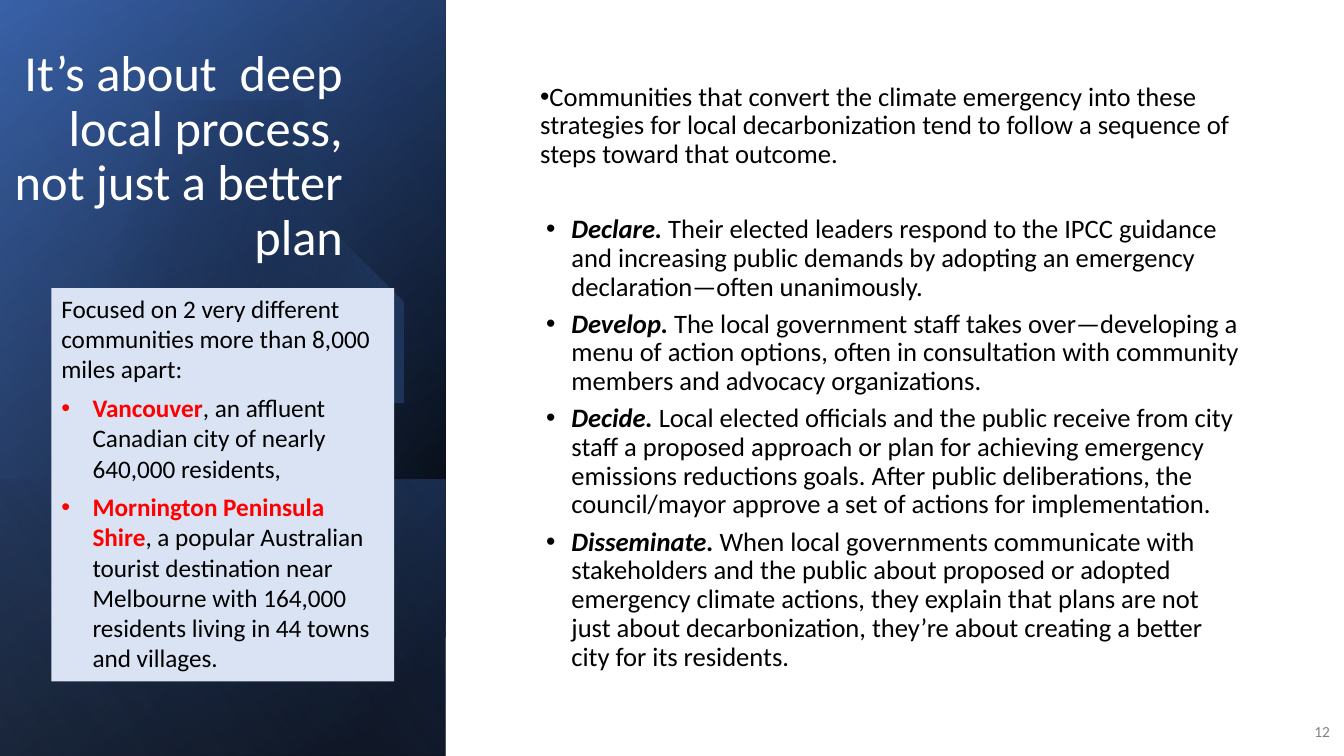
from lxml.etree import SubElement
from pptx import Presentation
from pptx.dml.color import RGBColor
from pptx.enum.shapes import MSO_SHAPE
from pptx.enum.text import MSO_ANCHOR, PP_ALIGN
from pptx.oxml.ns import qn
from pptx.util import Inches, Pt

BLACK = RGBColor(0x00, 0x00, 0x00)
WHITE = RGBColor(0xFF, 0xFF, 0xFF)
GRAY = RGBColor(0x80, 0x80, 0x80)
RED = RGBColor(0xFF, 0x00, 0x00)
PALE_BLUE = RGBColor(0xDA, 0xE3, 0xF3)
DEEP_BLUE = RGBColor(0x2F, 0x55, 0x97)
BLUE = RGBColor(0x44, 0x72, 0xC4)
LIGHT_BLUE = RGBColor(0x8F, 0xAA, 0xDC)

# Gradient layers: angle, then stops of (position, colour, opacity), in percent
PANEL_LAYERS = [
    (50, [(8, BLACK, 100), (100, DEEP_BLUE, 100)]),
    (30, [(0, BLACK, 0), (99, BLUE, 46)]),
]
FOOT_LAYER = (130, [(2, BLUE, 29), (100, BLACK, 30)])
GLOW_LAYER = (14, [(29, BLACK, 0), (100, BLUE, 43)])
SHEEN_LAYER = (120, [(0, BLACK, 0), (99, LIGHT_BLUE, 11)])

# Glow outline: start point and Bezier segments (two controls and an end)
GLOW_START = (1.49, 1.1)
GLOW_CURVES = [
    [(2.46, 1.12), (3.35, 1.77), (3.63, 2.75)],
    [(3.98, 3.97), (3.28, 5.23), (2.07, 5.58)],
    [(1.31, 5.8), (0.53, 5.61), (-0.03, 5.14)],
    [(-0.15, 5.03), (-0.15, 5.03), (-0.15, 5.03)],
    [(-0.15, 1.75), (-0.15, 1.75), (-0.15, 1.75)],
    [(0, 1.61), (0, 1.61), (0, 1.61)],
    [(0.23, 1.42), (0.5, 1.28), (0.8, 1.19)],
    [(1.03, 1.13), (1.26, 1.1), (1.49, 1.1)],
]

TITLE = "It’s about  deep local process, not just a better plan"
INTRO = ("Communities that convert the climate emergency into these strategies for local "
         "decarbonization tend to follow a sequence of steps toward that outcome.")
STEPS = [
    ("Declare.", " Their elected leaders respond to the IPCC guidance and increasing public "
     "demands by adopting an emergency declaration—often unanimously."),
    ("Develop.", " The local government staff takes over—developing a menu of action options, "
     "often in consultation with community members and advocacy organizations."),
    ("Decide.", " Local elected officials and the public receive from city staff a proposed "
     "approach or plan for achieving emergency emissions reductions goals. After public "
     "deliberations, the council/mayor approve a set of actions for implementation."),
    ("Disseminate.", " When local governments communicate with stakeholders and the public about "
     "proposed or adopted emergency climate actions, they explain that plans are not just about "
     "decarbonization, they’re about creating a better city for its residents."),
]
FOCUS = "Focused on 2 very different communities more than 8,000 miles apart:"
PLACES = [
    ("Vancouver", ", an affluent Canadian city of nearly 640,000 residents,"),
    ("Mornington Peninsula Shire", ", a popular Australian tourist destination near Melbourne "
     "with 164,000 residents living in 44 towns and villages."),
]


def add_paragraph(frame, text, lead="", size=18, color=BLACK, lead_color=BLACK, lead_italic=False,
                  align=PP_ALIGN.LEFT, spacing=1.0, before=0, after=6, bullet=None):
    """Add a paragraph with an optional bold lead and bullet (margin, indent)."""
    paragraph = frame.paragraphs[0]
    if paragraph.runs:
        paragraph = frame.add_paragraph()
    paragraph.alignment = align
    paragraph.line_spacing = spacing
    paragraph.space_before, paragraph.space_after = Pt(before), Pt(after)
    if bullet:
        margin, indent = bullet
        properties = paragraph._p.get_or_add_pPr()
        properties.set("marL", str(Inches(margin)))
        properties.set("indent", str(Inches(indent)))
        SubElement(properties, qn("a:buFont")).set("typeface", "Arial")
        SubElement(properties, qn("a:buChar")).set("char", "•")
    for words, is_lead in ((lead, True), (text, False)):
        if words:
            run = paragraph.add_run()
            run.text = words
            run.font.name, run.font.size = "Calibri", Pt(size)
            run.font.bold = is_lead
            run.font.italic = is_lead and lead_italic
            run.font.color.rgb = lead_color if is_lead else color


def add_text_frame(slide, left, top, width, height, anchor):
    box = slide.shapes.add_textbox(Inches(left), Inches(top), Inches(width), Inches(height))
    box.text_frame.word_wrap = True
    box.text_frame.vertical_anchor = anchor
    return box.text_frame


def fill_gradient(shape, layer):
    angle, stops = layer
    shape.shadow.inherit = False
    shape.line.fill.background()
    shape.fill.gradient()
    shape.fill.gradient_angle = 360 - angle
    for stop, (position, color, opacity) in zip(shape.fill.gradient_stops, stops):
        stop.position = position / 100
        stop.color.rgb = color
    colors = shape.element.spPr.iter(qn("a:srgbClr"))
    for element, (position, color, opacity) in zip(list(colors), stops):
        SubElement(element, qn("a:alpha")).set("val", str(opacity * 1000))


def add_turned_layer(slide, left, top, width, height, layer):
    """Cover the given box with a rectangle that is mirrored and turned by 90 degrees."""
    shape = slide.shapes.add_shape(
        MSO_SHAPE.RECTANGLE, Inches(left + (width - height) / 2),
        Inches(top + (height - width) / 2), Inches(height), Inches(width))
    shape.rotation = 90
    shape.element.spPr.find(qn("a:xfrm")).set("flipH", "1")
    fill_gradient(shape, layer)


def add_glow(slide, left, top):
    points, start = [], GLOW_START
    for first, second, end in GLOW_CURVES:
        steps = 1 if first == end else 16
        for step in range(1, steps + 1):
            t = step / steps
            weights = ((1 - t) ** 3, 3 * t * (1 - t) ** 2, 3 * t ** 2 * (1 - t), t ** 3)
            curve = (start, first, second, end)
            points.append(tuple(sum(w * p[axis] for w, p in zip(weights, curve))
                                for axis in (0, 1)))
        start = end
    builder = slide.shapes.build_freeform(*GLOW_START, scale=Inches(1))
    builder.add_line_segments(points, close=True)
    fill_gradient(builder.convert_to_shape(Inches(left), Inches(top)), GLOW_LAYER)


def add_panel(slide, left, top, width, height):
    # Layered gradients
    for layer in PANEL_LAYERS:
        add_turned_layer(slide, left, top, width, height, layer)
    foot = 2.74
    add_turned_layer(slide, left, top + height - foot, width, foot, FOOT_LAYER)
    add_glow(slide, left, top)
    add_turned_layer(slide, left, top, width, height, SHEEN_LAYER)
    # Title
    frame = add_text_frame(slide, left, top, 3.5, 2.69, MSO_ANCHOR.BOTTOM)
    add_paragraph(frame, TITLE, size=36, color=WHITE, align=PP_ALIGN.RIGHT, spacing=0.9, after=0)


def add_places(slide, left, top, width, height):
    card = slide.shapes.add_shape(MSO_SHAPE.RECTANGLE, Inches(left), Inches(top),
                                  Inches(width), Inches(height))
    card.shadow.inherit = False
    card.fill.solid()
    card.fill.fore_color.rgb = PALE_BLUE
    card.line.fill.background()
    frame = card.text_frame
    frame.word_wrap = True
    frame.vertical_anchor = MSO_ANCHOR.TOP
    add_paragraph(frame, FOCUS)
    for place, description in PLACES:
        add_paragraph(frame, description, lead=place, lead_color=RED, bullet=(0.31, -0.31))


def add_steps(slide, left, top, width, height):
    frame = add_text_frame(slide, left, top, width, height, MSO_ANCHOR.MIDDLE)
    add_paragraph(frame, INTRO, size=19, spacing=0.9, bullet=(0, -0.25))
    for index, (name, description) in enumerate(STEPS):
        add_paragraph(frame, description, lead=name, lead_italic=True, size=19, spacing=0.9,
                      before=0 if index else 27, bullet=(0.31, -0.25))


def add_page_number(slide, left, top, width, height):
    frame = add_text_frame(slide, left, top, width, height, MSO_ANCHOR.MIDDLE)
    add_paragraph(frame, "12", size=11, color=GRAY, align=PP_ALIGN.RIGHT)


def main():
    presentation = Presentation()
    presentation.slide_width, presentation.slide_height = Inches(13.33), Inches(7.5)
    slide = presentation.slides.add_slide(presentation.slide_layouts[6])
    add_panel(slide, 0, 0, 4.42, 7.5)
    add_steps(slide, 5.26, 0.71, 7.17, 6.07)
    add_page_number(slide, 12.8, 7.06, 0.49, 0.4)
    add_places(slide, 0.51, 2.86, 3.4, 3.9)
    presentation.save("out.pptx")


if __name__ == "__main__":
    main()
